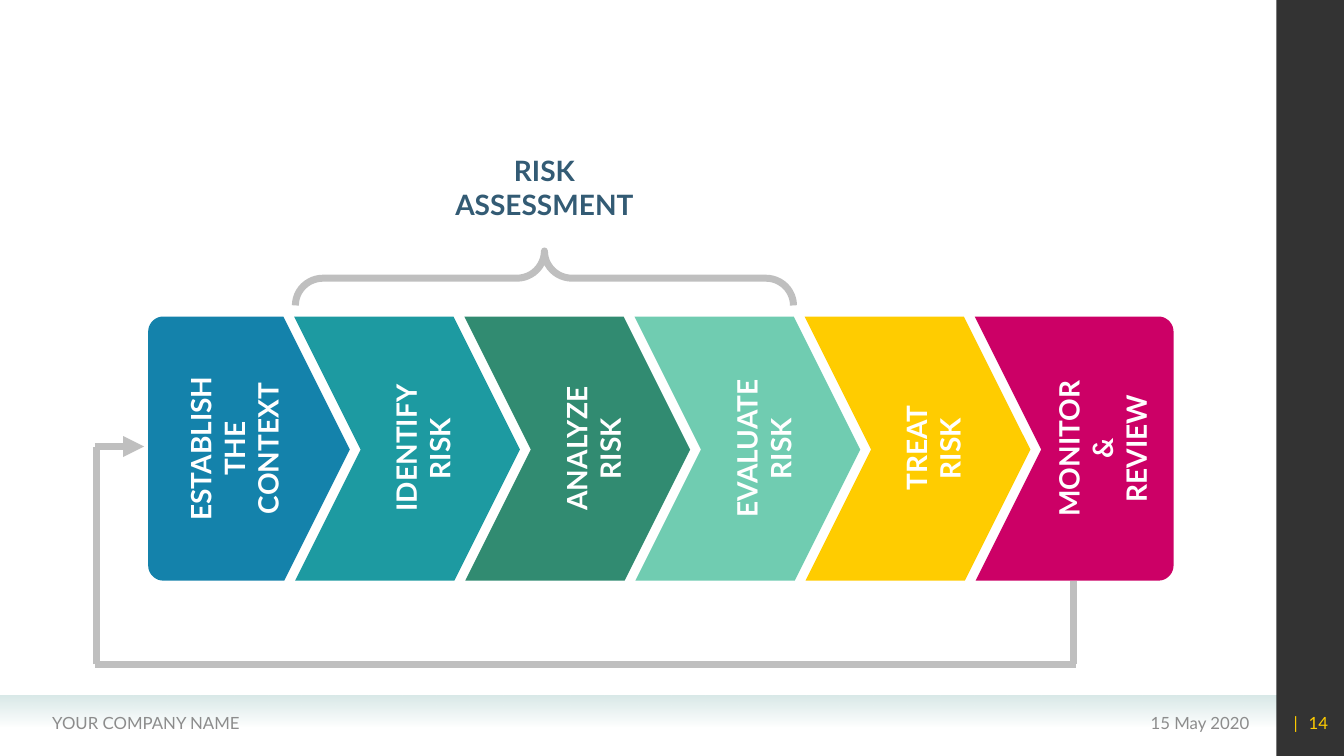
from dataclasses import dataclass
from math import cos, radians, sin

from lxml import etree
from pptx import Presentation
from pptx import util as u
from pptx.dml.color import RGBColor
from pptx.enum import shapes, text
from pptx.oxml import ns


@dataclass(frozen=True)
class Theme:
    """Colours, font and type sizes of the slide."""
    font: str = "Lato"
    label_size: int = 20
    footer_size: int = 12
    line_width: int = 5
    white: str = "FFFFFF"
    grey: str = "BFBFBF"
    footer_text: str = "8C8C8C"
    footer_band: str = "D9E9E8"
    side_bar: str = "000000"
    accent: str = "FFCC00"
    heading: str = "335B74"


THEME = Theme()
CENTER, LEFT, RIGHT = text.PP_ALIGN.CENTER, text.PP_ALIGN.LEFT, text.PP_ALIGN.RIGHT
MIDDLE, BOTTOM = text.MSO_ANCHOR.MIDDLE, text.MSO_ANCHOR.BOTTOM
STEPS = [
    ("1482AB", ["ESTABLISH THE", "CONTEXT"], 2.32, 2.19),
    ("1D9AA1", ["IDENTIFY RISK"], 4.19, 2),
    ("318B71", ["ANALYZE RISK"], 5.88, 2.05),
    ("70CCB1", ["EVALUATE RISK"], 7.57, 2.21),
    ("FFCC00", ["TREAT RISK"], 9.25, 1.67),
    ("CC0066", ["MONITOR &", "REVIEW"], 10.93, 1.6),
]


def inches(*values):
    """Turn numbers into lengths."""
    return [u.Inches(v) for v in values]


def set_alpha(color_format, percent):
    """Give a colour element an opacity."""
    etree.SubElement(color_format, ns.qn("a:alpha")).set("val", str(percent * 1000))


def add_label(s, box, lines, color, size, bold=False, align=CENTER, anchor=MIDDLE, rotation=0):
    """Place a text box with one paragraph per line and return its frame."""
    sp = s.shapes.add_textbox(*inches(*box))
    sp.rotation = rotation
    tf = sp.text_frame
    side = u.Inches(0.11 if bold else 0.1)
    frame = {"word_wrap": True, "vertical_anchor": anchor, "margin_left": side, "margin_right": side}
    for name, value in frame.items():
        setattr(tf, name, value)
    for i, line in enumerate(lines):
        p = tf.paragraphs[0] if i == 0 else tf.add_paragraph()
        p.alignment = align
        for part in line if isinstance(line, tuple) else (line,):
            r = p.add_run()
            r.text = part
            for name, value in {"name": THEME.font, "size": u.Pt(size), "bold": bold}.items():
                setattr(r.font, name, value)
            r.font.color.rgb = RGBColor.from_string(color)
    return tf


def add_panel(s, box):
    """Place a plain rectangle without line or shadow."""
    sp = s.shapes.add_shape(shapes.MSO_SHAPE.RECTANGLE, *inches(*box))
    sp.shadow.inherit = False
    sp.line.fill.background()
    return sp


def add_frame(s, width, height):
    """Draw the footer band, side bar and footer texts."""
    bar = 0.67
    inner = width - bar
    band = add_panel(s, (0, 6.9, inner, 0.31))
    band.fill.gradient()
    band.fill.gradient_angle = 270
    for stop in band.fill.gradient_stops:
        stop.color.rgb = RGBColor.from_string(THEME.footer_band)
    set_alpha(band.fill._xPr.findall(".//" + ns.qn("a:srgbClr"))[-1], 0)

    side = add_panel(s, (inner, 0, bar, height))
    side.fill.solid()
    side.fill.fore_color.rgb = RGBColor.from_string(THEME.side_bar)
    set_alpha(side.fill._xPr.find(".//" + ns.qn("a:srgbClr")), 80)

    top, tall, size = 6.97, 0.4, THEME.footer_size
    add_label(s, (9.1, top, 3.39, tall), ["15 May 2020"], THEME.footer_text, size, align=RIGHT)
    add_label(s, (0.42, top, 4.9, tall), ["YOUR COMPANY NAME"], THEME.footer_text, size, align=LEFT)
    tf = add_label(s, (12.6, top, bar, tall), [("| ", "14")], THEME.accent, size, align=RIGHT)
    tf.paragraphs[0].runs[0].font._element.set("spc", "230")


def corner(x, y, radius, start):
    """List the points of a clockwise quarter circle around a centre."""
    angles = [radians(start + 10 * i) for i in range(10)]
    return [(x + radius * cos(a), y + radius * sin(a)) for a in angles]


def add_steps(s, left, top, width, height):
    """Draw the interlocking arrows with rounded outer ends and their labels."""
    pitch, radius, notch = 1.6875, 0.15, 0.66
    right, bottom, middle = left + width, top + height, top + 1.32
    last = len(STEPS) - 1
    for i, (color, lines, center, length) in enumerate(STEPS):
        x = left - 0.24 + pitch * i
        start = [(x + 0.01, bottom), (x + notch, middle), (x, top)]
        end = [(x + 1.58, top), (x + 2.24, middle), (x + 1.59, bottom)]
        if i == 0:
            start = (corner(left + radius, bottom - radius, radius, 90)
                     + corner(left + radius, top + radius, radius, 180))
        if i == last:
            end = (corner(right - radius, top + radius, radius, 270)
                   + corner(right - radius, bottom - radius, radius, 0))
        points = [inches(*point) for point in start + end]
        builder = s.shapes.build_freeform(*points[0])
        builder.add_line_segments(points[1:], close=True)
        sp = builder.convert_to_shape()
        sp.shadow.inherit = False
        sp.fill.solid()
        sp.fill.fore_color.rgb = RGBColor.from_string(color)
        sp.line.fill.background()

        tall = 0.44 if len(lines) == 1 else 0.77
        box = (center - length / 2, 4.45 - tall / 2, length, tall)
        add_label(s, box, lines, THEME.white, THEME.label_size, bold=True, rotation=270)


def style_line(sp):
    """Give a shape the thick grey line."""
    sp.line.color.rgb = RGBColor.from_string(THEME.grey)
    sp.line.width = u.Pt(THEME.line_width)


def add_assessment(s, left, top, width, height):
    """Draw the brace over the assessment steps and its heading."""
    x, y = left + (width - height) / 2, top + (height - width) / 2
    sp = s.shapes.add_shape(shapes.MSO_SHAPE.RIGHT_BRACE, *inches(x, y, height, width))
    sp.rotation = 270
    sp.adjustments[0], sp.adjustments[1] = 0.507, 0.5
    sp.shadow.inherit = False
    sp.fill.background()
    style_line(sp)
    length = 2.63
    box = (left + (width - length) / 2, top - 0.69, length, 0.44)
    add_label(s, box, ["RISK ASSESSMENT"], THEME.heading, THEME.label_size, bold=True, anchor=BOTTOM)


def add_feedback(s, left, top, right, bottom):
    """Draw the loop from the last step back to the first."""
    lap = 0.02
    route = [
        (right, top, right, bottom),
        (right + lap, bottom, left - lap, bottom),
        (left, bottom, left, 4.43),
        (left - lap, 4.43, 1.43, 4.43),
    ]
    for ends in route:
        sp = s.shapes.add_connector(shapes.MSO_CONNECTOR.STRAIGHT, *inches(*ends))
        style_line(sp)
        etree.SubElement(sp._element.spPr, ns.qn("a:effectLst"))
    etree.SubElement(sp.line._get_or_add_ln(), ns.qn("a:tailEnd")).set("type", "triangle")


def main():
    """Build the risk process slide."""
    prs = Presentation()
    width, height = 13.33, 7.5
    prs.slide_width, prs.slide_height = inches(width, height)
    s = prs.slides.add_slide(prs.slide_layouts[6])
    add_frame(s, width, height)
    add_steps(s, 1.47, 3.14, 10.17, 2.62)
    add_assessment(s, 2.93, 2.49, 4.94, 0.54)
    add_feedback(s, 0.96, 5.76, 10.65, 6.59)
    prs.save("out.pptx")


if __name__ == "__main__":
    main()
